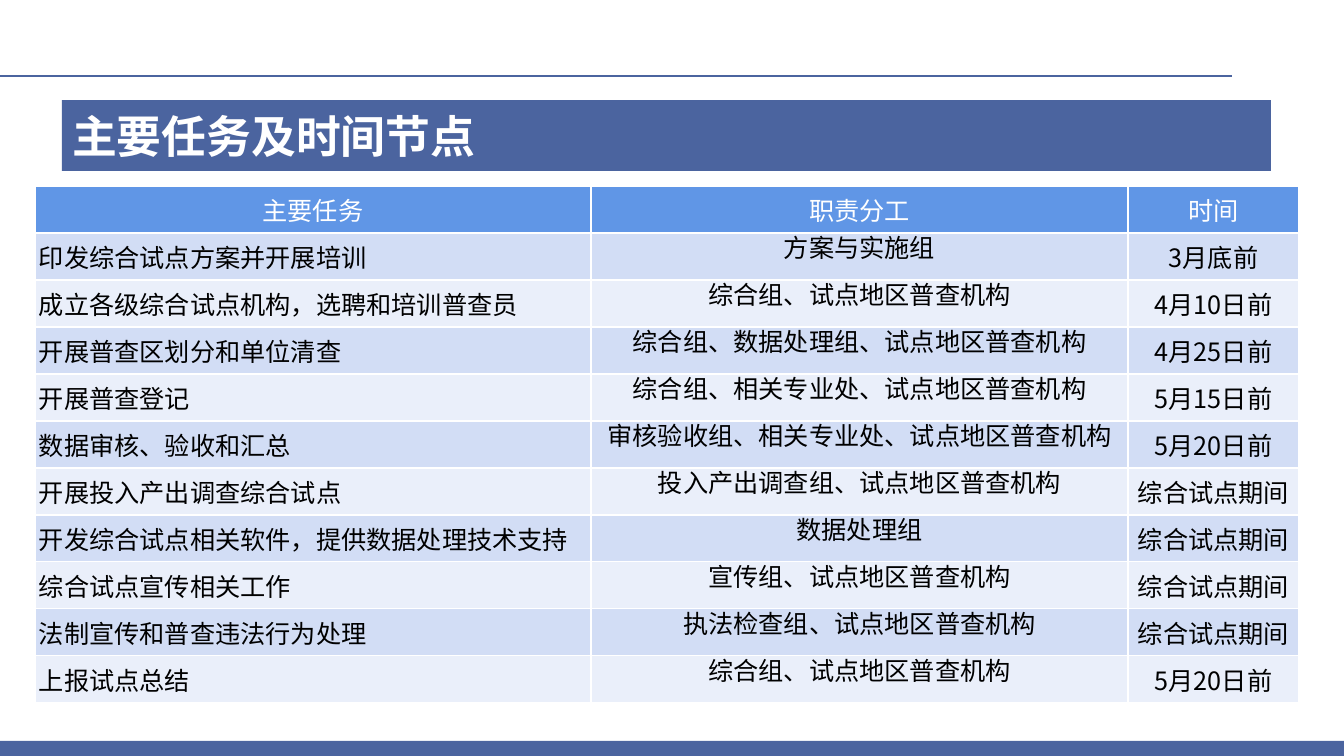
from lxml.etree import SubElement
from pptx import Presentation
from pptx.dml.color import RGBColor
from pptx.enum.lang import MSO_LANGUAGE_ID
from pptx.enum.shapes import MSO_CONNECTOR, MSO_SHAPE
from pptx.enum.text import MSO_ANCHOR, PP_ALIGN
from pptx.oxml.ns import qn
from pptx.util import Emu, Pt

NAVY = RGBColor(0x4B, 0x64, 0x9F)
HEADER_BLUE = RGBColor(0x60, 0x96, 0xE6)
BAND_DARK = RGBColor(0xD2, 0xDD, 0xF5)
BAND_LIGHT = RGBColor(0xEA, 0xEF, 0xFA)
WHITE = RGBColor(0xFF, 0xFF, 0xFF)
BLACK = RGBColor(0x00, 0x00, 0x00)
CHINESE_FONT = "Noto Sans CJK SC"

SLIDE_WIDTH, SLIDE_HEIGHT = 1344, 756
COLUMN_WIDTHS = (556, 537, 171)
ROW_HEIGHT = 47

HEADER = ("主要任务", "职责分工", "时间")
TASKS = [
    ("印发综合试点方案并开展培训", "方案与实施组", "3月底前"),
    ("成立各级综合试点机构，选聘和培训普查员", "综合组、试点地区普查机构", "4月10日前"),
    ("开展普查区划分和单位清查", "综合组、数据处理组、试点地区普查机构", "4月25日前"),
    ("开展普查登记", "综合组、相关专业处、试点地区普查机构", "5月15日前"),
    ("数据审核、验收和汇总", "审核验收组、相关专业处、试点地区普查机构", "5月20日前"),
    ("开展投入产出调查综合试点", "投入产出调查组、试点地区普查机构", "综合试点期间"),
    ("开发综合试点相关软件，提供数据处理技术支持", "数据处理组", "综合试点期间"),
    ("综合试点宣传相关工作", "宣传组、试点地区普查机构", "综合试点期间"),
    ("法制宣传和普查违法行为处理", "执法检查组、试点地区普查机构", "综合试点期间"),
    ("上报试点总结", "综合组、试点地区普查机构", "5月20日前"),
]


def px(length):
    return Emu(round(length * 914400 / 100.8))


def style_paragraph(paragraph, size, color, latin_font, bold, alignment):
    paragraph.alignment = alignment
    font = paragraph.font
    font.size, font.bold = Pt(size), bold
    font.color.rgb = color
    font.name = latin_font
    font.language_id = MSO_LANGUAGE_ID.SIMPLIFIED_CHINESE
    properties = paragraph._p.pPr.find(qn("a:defRPr"))
    SubElement(properties, qn("a:ea")).set("typeface", CHINESE_FONT)


def add_frame(slide, left, top, width, height):
    """Draw the rule near the top and the bar along the bottom of the box."""
    bar_height = 15
    bar = slide.shapes.add_shape(
        MSO_SHAPE.RECTANGLE, px(left), px(top + height - bar_height), px(width), px(bar_height))
    bar.shadow.inherit = False
    bar.fill.solid()
    bar.fill.fore_color.rgb = NAVY
    bar.line.fill.background()

    rule_top = px(top + 76)
    rule = slide.shapes.add_connector(
        MSO_CONNECTOR.STRAIGHT, px(left), rule_top, px(left + width - 112), rule_top)
    rule.line.color.rgb = NAVY
    rule.line.width = Pt(2)
    SubElement(rule._element.spPr, qn("a:effectLst"))


def fill_title(slide, text, left, top, width, height):
    title = slide.shapes.title
    title.left, title.top, title.width, title.height = map(px, (left, top, width, height))
    title.fill.solid()
    title.fill.fore_color.rgb = NAVY
    frame = title.text_frame
    frame.text = text
    frame.vertical_anchor = MSO_ANCHOR.MIDDLE
    style_paragraph(frame.paragraphs[0], 32, WHITE, "Arial", True, PP_ALIGN.LEFT)


def fill_cell(cell, text, row, column):
    is_header = row == 0
    cell.margin_left = cell.margin_right = px(4)
    cell.margin_top = cell.margin_bottom = 0
    cell.vertical_anchor = MSO_ANCHOR.MIDDLE
    cell.fill.solid()
    cell.fill.fore_color.rgb = (
        HEADER_BLUE if is_header else BAND_DARK if row % 2 else BAND_LIGHT)
    cell.text = text
    paragraph = cell.text_frame.paragraphs[0]
    if column == 1 and not is_header:
        paragraph.line_spacing = Pt(12)
    alignment = PP_ALIGN.LEFT if column == 0 and not is_header else PP_ALIGN.CENTER
    style_paragraph(
        paragraph, 18, WHITE if is_header else BLACK, CHINESE_FONT, False, alignment)


def add_task_table(slide, left, top):
    rows = [HEADER, *TASKS]
    table = slide.shapes.add_table(
        len(rows), len(HEADER), px(left), px(top),
        px(sum(COLUMN_WIDTHS)), px(ROW_HEIGHT * len(rows))).table
    for column, width in zip(table.columns, COLUMN_WIDTHS):
        column.width = px(width)
    for row_index, texts in enumerate(rows):
        table.rows[row_index].height = px(ROW_HEIGHT)
        for column_index, text in enumerate(texts):
            fill_cell(table.cell(row_index, column_index), text, row_index, column_index)


def main():
    presentation = Presentation()
    presentation.slide_width, presentation.slide_height = px(SLIDE_WIDTH), px(SLIDE_HEIGHT)
    slide = presentation.slides.add_slide(presentation.slide_layouts[5])
    add_frame(slide, 0, 0, SLIDE_WIDTH, SLIDE_HEIGHT)
    fill_title(slide, "主要任务及时间节点", 62, 100, 1209, 71)
    add_task_table(slide, 35, 186)
    presentation.save("out.pptx")


if __name__ == "__main__":
    main()
